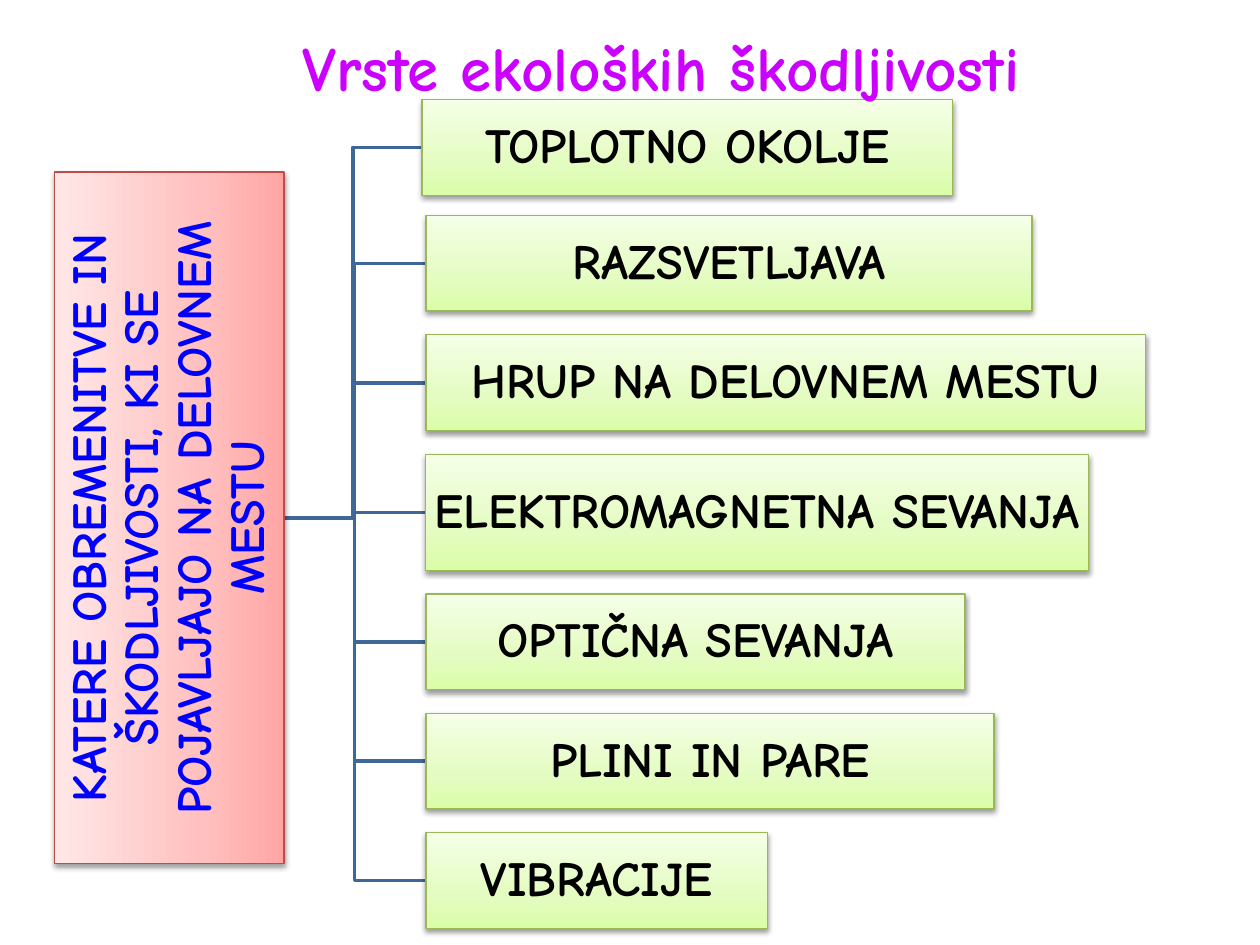
from lxml import etree
from pptx import Presentation
from pptx import util as u
from pptx.dml.color import RGBColor
from pptx.enum import shapes, text
from pptx.oxml import parse_xml

TITLE = "Vrste ekoloških škodljivosti"
ROOT = "KATERE OBREMENITVE IN ŠKODLJIVOSTI, KI SE POJAVLJAJO NA DELOVNEM MESTU"
FIRST_HAZARD = ("TOPLOTNO OKOLJE", 4.21, 0.76)
HAZARDS = [
    ("RAZSVETLJAVA", 4.81, 0.76),
    ("HRUP NA DELOVNEM MESTU", 5.71, 0.76),
    ("ELEKTROMAGNETNA SEVANJA", 5.26, 0.92),
    ("OPTIČNA SEVANJA", 4.28, 0.76),
    ("PLINI IN PARE", 4.51, 0.76),
    ("VIBRACIJE", 2.71, 0.76),
]
THEME = {
    "font": "Comic Neue",
    "title": ("CC00FF", 36),
    "root": ("0000FF", 28),
    "hazard": ("000000", 28),
    "branch": "3F6797",
    "red": (("FFA6A5", "FFC0BF", "FFE7E7"), "BF4C48"),
    "green": (("DAFDA7", "E4FCC2", "F5FFE7"), "98B955"),
}
DRAWING = "http://schemas.openxmlformats.org/drawingml/2006/main"
ROOT_RIGHT, ROOT_MIDDLE = 2.25, 4.11
FIRST_LEFT, FIRST_TOP = 3.35, 0.79
LIST_LEFT, LIST_TOP, LIST_BOTTOM = 3.38, 1.71, 7.37


def write(box, wording, style):
    color, size = style
    frame = box.text_frame
    frame.word_wrap = True
    frame.text = wording
    para = frame.paragraphs[0]
    para.alignment = text.PP_ALIGN.CENTER
    font = para.runs[0].font
    font.name, font.size, font.bold = THEME["font"], u.Pt(size), True
    font.color.rgb = RGBColor.from_string(color)
    return para


def add_panel(page, wording, place, look, style, rotation=0):
    stops, outline = look
    box = page.shapes.add_shape(shapes.MSO_SHAPE.RECTANGLE, *map(u.Inches, place))
    box.rotation = rotation
    box.line.color.rgb = RGBColor.from_string(outline)
    box.line.width = u.Pt(0.75)
    colors = "".join(
        f'<a:gs pos="{position * 1000}"><a:srgbClr val="{color}"/></a:gs>'
        for position, color in zip((0, 35, 100), stops)
    )
    gradient = parse_xml(
        f'<a:gradFill xmlns:a="{DRAWING}" rotWithShape="1"><a:gsLst>{colors}</a:gsLst>'
        '<a:lin ang="16200000" scaled="0"/></a:gradFill>'
    )
    properties = box._element.spPr
    properties.find(f"{{{DRAWING}}}prstGeom").addnext(gradient)
    box.shadow.inherit = False
    effects = properties.find(f"{{{DRAWING}}}effectLst")
    shadow = etree.SubElement(
        effects, f"{{{DRAWING}}}outerShdw", blurRad=str(u.Pt(3.1)),
        dist=str(u.Pt(1.6)), dir="5400000", rotWithShape="0",
    )
    black = etree.SubElement(shadow, f"{{{DRAWING}}}srgbClr", val="000000")
    etree.SubElement(black, f"{{{DRAWING}}}alpha", val="38000")
    frame = box.text_frame
    frame.margin_left = frame.margin_right = u.Inches(0.02)
    frame.margin_top = frame.margin_bottom = u.Inches(0.02)
    frame.vertical_anchor = text.MSO_ANCHOR.MIDDLE
    para = write(box, wording, style)
    para.line_spacing = 0.9


def add_branch(page, left, middle):
    bend = (ROOT_RIGHT + left) / 2
    points = [(bend, ROOT_MIDDLE), (bend, middle), (left, middle)]
    builder = page.shapes.build_freeform(u.Inches(ROOT_RIGHT), u.Inches(ROOT_MIDDLE))
    builder.add_line_segments(
        [(u.Inches(x), u.Inches(y)) for x, y in points], close=False
    )
    branch = builder.convert_to_shape()
    branch.shadow.inherit = False
    branch.fill.background()
    branch.line.color.rgb = RGBColor.from_string(THEME["branch"])
    branch.line.width = u.Pt(2)


def place_hazards():
    name, width, height = FIRST_HAZARD
    placed = [(name, (FIRST_LEFT, FIRST_TOP, width, height))]
    used = sum(height for _, _, height in HAZARDS)
    gap = (LIST_BOTTOM - LIST_TOP - used) / (len(HAZARDS) - 1)
    top = LIST_TOP
    for name, width, height in HAZARDS:
        placed.append((name, (LIST_LEFT, top, width, height)))
        top += height + gap
    return placed


def main():
    deck = Presentation()
    deck.slide_width, deck.slide_height = u.Inches(10), u.Inches(7.5)
    page = deck.slides.add_slide(deck.slide_layouts[6])
    hazards = place_hazards()
    for _, (left, top, _, height) in reversed(hazards):
        add_branch(page, left, top + height / 2)
    add_panel(page, ROOT, (-1.4, 3.2, 5.49, 1.82), THEME["red"], THEME["root"], 270)
    for name, place in hazards:
        add_panel(page, name, place, THEME["green"], THEME["hazard"])
    title = page.shapes.add_textbox(*map(u.Inches, (0.27, 0.09, 9.37, 0.75)))
    para = write(title, TITLE, THEME["title"])
    para.line_spacing = 1.15
    para.space_before = u.Pt(1.7)
    para._p.get_or_add_pPr().set("marL", str(u.Inches(0.58)))
    deck.save("out.pptx")


if __name__ == "__main__":
    main()
